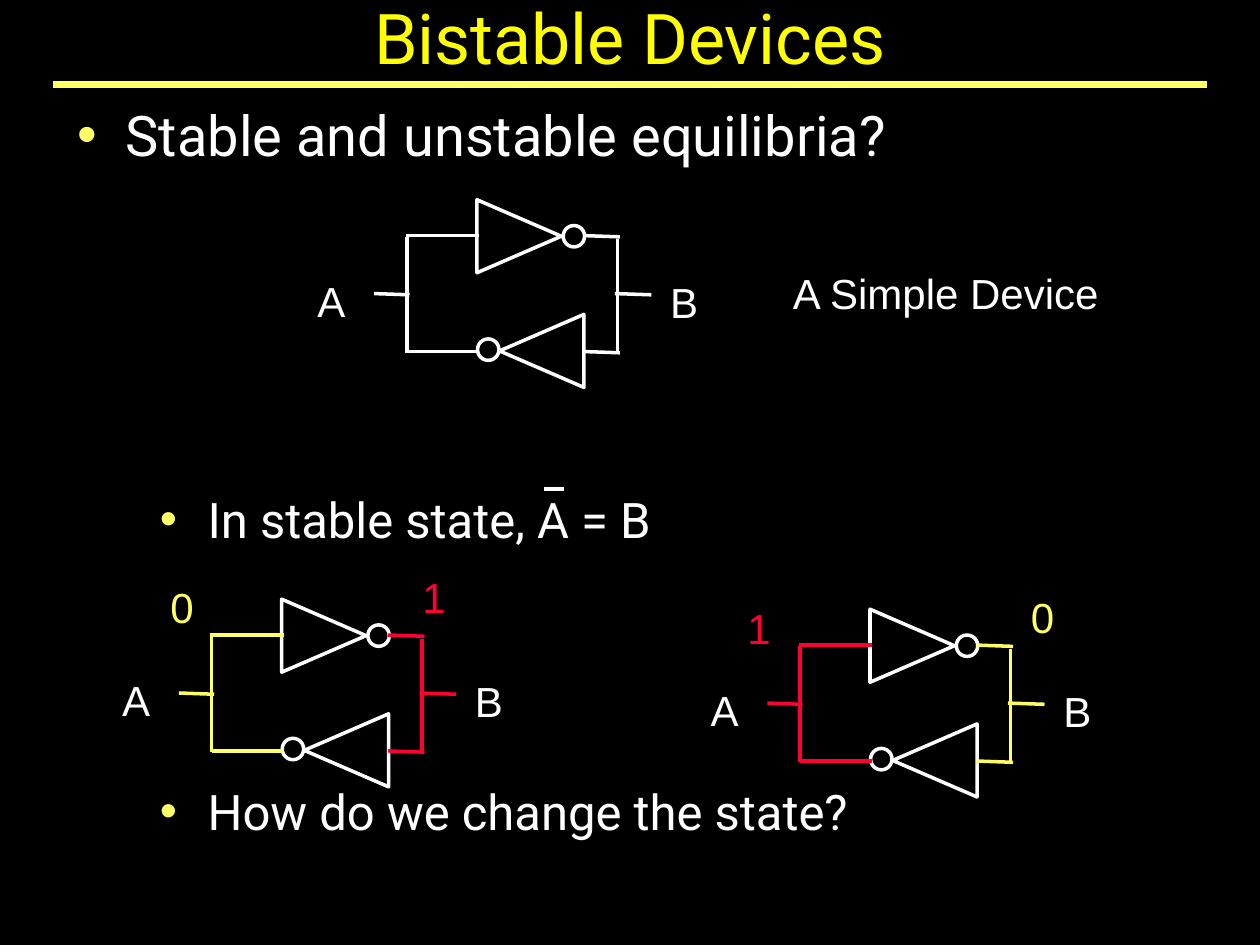
import dataclasses
import pptx
import pptx.dml.color
import pptx.enum.shapes
import pptx.enum.text
import pptx.oxml.xmlchemy
import pptx.util
from lxml import etree
from pptx.oxml import ns
from pptx.util import Inches

SHAPE = pptx.enum.shapes.MSO_SHAPE
ALIGN = pptx.enum.text.PP_ALIGN


@dataclasses.dataclass(frozen=True)
class Theme:
    background: str = "000000"
    white: str = "FFFFFF"
    title: str = "FFFF00"
    yellow: str = "FFFF66"
    red: str = "FF0033"
    body_font: str = "Roboto"
    label_font: str = "Arial"
    title_size: int = 40
    bullet_size: int = 32
    sub_bullet_size: int = 28
    label_size: int = 24
    rule_width: float = 4
    wire_width: float = 2


THEME = Theme()


def rgb(colour):
    return pptx.dml.color.RGBColor.from_string(colour)


def add_line(page, start, end, colour, width=THEME.wire_width):
    line = page.shapes.add_connector(
        pptx.enum.shapes.MSO_CONNECTOR.STRAIGHT,
        *(Inches(value) for value in (*start, *end)))
    line.line.color.rgb = rgb(colour)
    line.line.width = pptx.util.Pt(width)
    properties = line._element.find(ns.qn("p:spPr"))
    etree.SubElement(properties, ns.qn("a:effectLst"))


def add_outline(page, kind, left, top, width, height, rotation=0):
    shape = page.shapes.add_shape(
        kind, Inches(left), Inches(top), Inches(width), Inches(height))
    shape.rotation = rotation
    shape.shadow.inherit = False
    shape.fill.background()
    shape.line.color.rgb = rgb(THEME.white)
    shape.line.width = pptx.util.Pt(THEME.wire_width)


def add_text(page, area, lines, font, size, colour, wrap=True):
    box = page.shapes.add_textbox(*(Inches(value) for value in area))
    frame = box.text_frame
    frame.word_wrap = wrap
    frame.text = "\n".join(lines)
    for para in frame.paragraphs:
        for span in para.runs:
            span.font.name = font
            span.font.size = pptx.util.Pt(size)
            span.font.color.rgb = rgb(colour)
    return frame


def add_title(page, text):
    frame = add_text(page, (0.75, 0, 8.5, 0.67), [text],
                     THEME.body_font, THEME.title_size, THEME.title)
    frame.vertical_anchor = pptx.enum.text.MSO_ANCHOR.BOTTOM
    frame.paragraphs[0].alignment = ALIGN.CENTER


def add_bullets(page, area, lines, size, line_spacing=1.0, gap=0):
    frame = add_text(page, area, lines, THEME.body_font, size, THEME.white)
    for index, para in enumerate(frame.paragraphs):
        para.line_spacing = line_spacing
        para.space_before = pptx.util.Pt(gap if index else size * 0.2)
        properties = para._p.get_or_add_pPr()
        properties.set("marL", str(Inches(0.38)))
        properties.set("indent", str(Inches(-0.38)))
        colour = etree.SubElement(properties, ns.qn("a:buClr"))
        etree.SubElement(colour, ns.qn("a:srgbClr"), val=THEME.yellow)
        etree.SubElement(properties, ns.qn("a:buFont"), typeface=THEME.label_font)
        etree.SubElement(properties, ns.qn("a:buChar"), char="•")


def add_label(page, text, left, top, width, height, colour=THEME.white):
    frame = add_text(page, (left, top, width, height), [text],
                     THEME.label_font, THEME.label_size, colour, wrap=False)
    frame.auto_size = pptx.enum.text.MSO_AUTO_SIZE.SHAPE_TO_FIT_TEXT
    frame.paragraphs[0].alignment = ALIGN.CENTER
    frame.paragraphs[0].line_spacing = 1.16


def add_inverter(page, triangle, bubble, rotation):
    add_outline(page, SHAPE.ISOSCELES_TRIANGLE, *triangle, 0.58, 0.67, rotation)
    add_outline(page, SHAPE.OVAL, *bubble, 0.17, 0.17)


def add_latch(page, left, top, left_colour, right_colour):
    def at(x, y):
        return left + x, top + y

    add_inverter(page, at(0.6, -0.34), at(1.24, -0.09), 90)
    add_inverter(page, at(0.78, 0.57), at(0.56, 0.81), 270)
    left_wires = [((0.57, -0.01), (-0.01, -0.01)), ((0.57, 0.91), (0, 0.91)),
                  ((0.02, 0.46), (-0.26, 0.45)), ((0, 0), (0, 0.92))]
    right_wires = [((1.69, 0), (1.4, -0.01)), ((1.69, 0.92), (1.4, 0.91)),
                   ((1.94, 0.46), (1.65, 0.45)), ((1.67, 0.02), (1.67, 0.93))]
    for wires, colour in ((left_wires, left_colour), (right_wires, right_colour)):
        for start, end in wires:
            add_line(page, at(*start), at(*end), colour)
    add_label(page, "A", *at(-0.81, 0.19), 0.42, 0.56)
    add_label(page, "B", *at(1.99, 0.2), 0.42, 0.56)


def main():
    deck = pptx.Presentation()
    deck.slide_width, deck.slide_height = Inches(10), Inches(7.5)
    page = deck.slides.add_slide(deck.slide_layouts[6])
    page.background.fill.solid()
    page.background.fill.fore_color.rgb = rgb(THEME.background)

    add_line(page, (0.42, 0.67), (9.58, 0.67), THEME.yellow, THEME.rule_width)
    add_title(page, "Bistable Devices")
    add_bullets(page, (1.17, 3.92, 8.5, 2.92),
                ["In stable state, A = B", "How do we change the state?"],
                THEME.sub_bullet_size, line_spacing=0.82, gap=139)
    add_line(page, (4.32, 3.88), (4.48, 3.88), THEME.white)

    add_latch(page, 3.23, 1.88, THEME.white, THEME.white)
    add_latch(page, 1.68, 5.05, THEME.yellow, THEME.red)
    add_latch(page, 6.35, 5.13, THEME.red, THEME.yellow)

    for text, left, top, colour in (("0", 1.25, 4.5, THEME.yellow),
                                    ("1", 3.25, 4.42, THEME.red),
                                    ("1", 5.83, 4.67, THEME.red),
                                    ("0", 8.08, 4.58, THEME.yellow)):
        add_label(page, text, left, top, 0.39, 0.53, colour)
    add_label(page, "A Simple Device", 6.18, 2.01, 2.65, 0.56)
    add_bullets(page, (0.52, 0.75, 9.06, 0.75),
                ["Stable and unstable equilibria?"], THEME.bullet_size)
    deck.save("out.pptx")


if __name__ == "__main__":
    main()
